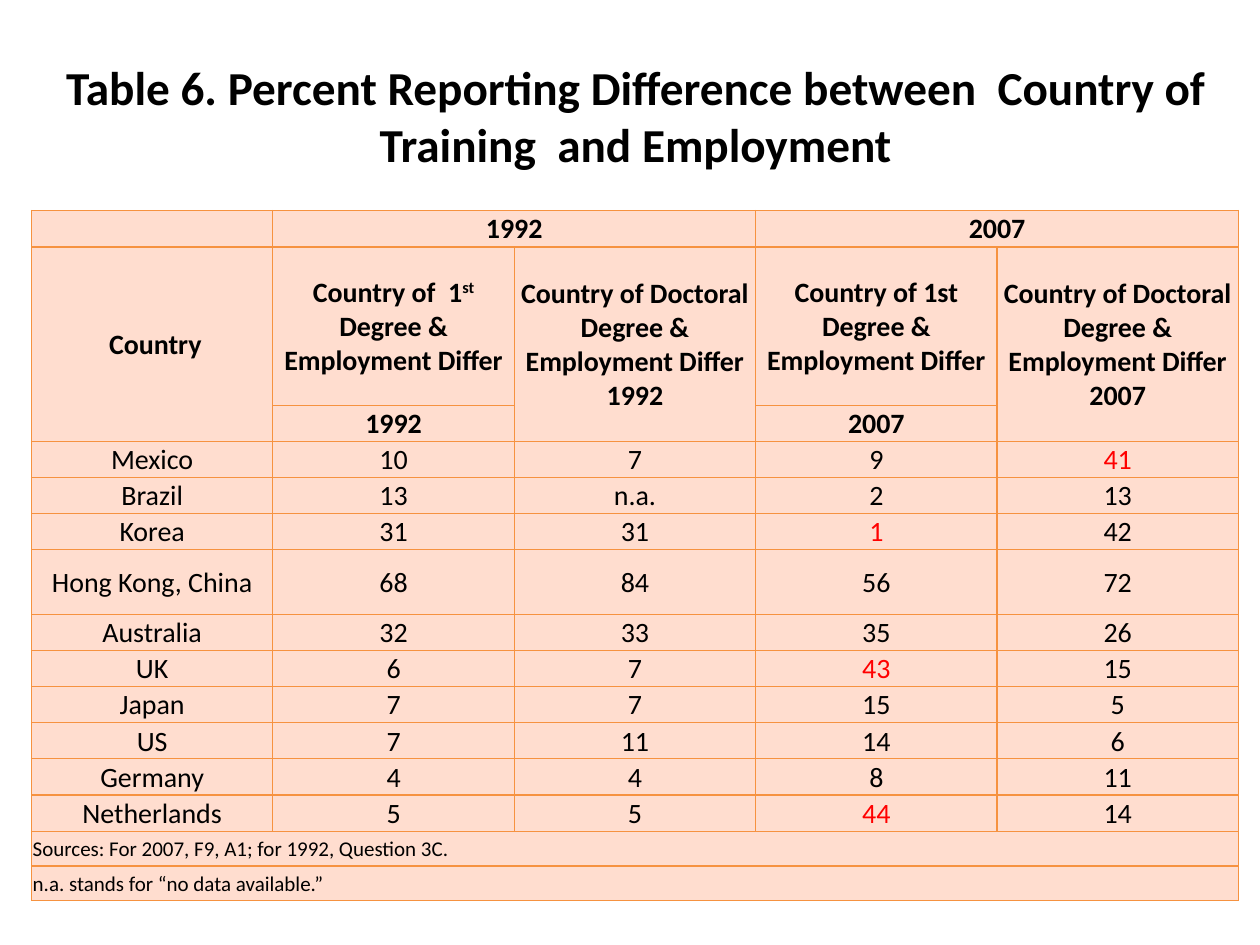
from lxml import etree
from pptx import Presentation
from pptx.dml.color import RGBColor
from pptx.enum import text
from pptx.oxml import ns
from pptx.util import Inches, Pt

FONT = "Calibri"
BLACK = RGBColor(0x00, 0x00, 0x00)
RED = RGBColor(0xFF, 0x00, 0x00)
PEACH = RGBColor(0xFF, 0xDD, 0xCF)
ORANGE = RGBColor(0xF6, 0x92, 0x40)

TITLE = "Table 6. Percent Reporting Difference between  Country of Training  and Employment"
HEADERS = [
    ["", "1992", "", "2007", ""],
    ["Country", "", "Country of Doctoral Degree & Employment Differ 1992",
     "Country of 1st Degree & Employment Differ",
     "Country of Doctoral Degree & Employment Differ 2007"],
    ["", "1992", "", "2007", ""],
]
FIRST_DEGREE_RUNS = [("Country of  1", False), ("st", True), (" Degree & Employment Differ", False)]
COUNTRIES = [
    ["Mexico", "10", "7", "9", "41"],
    ["Brazil", "13", "n.a.", "2", "13"],
    ["Korea", "31", "31", "1", "42"],
    ["Hong Kong, China", "68", "84", "56", "72"],
    ["Australia", "32", "33", "35", "26"],
    ["UK", "6", "7", "43", "15"],
    ["Japan", "7", "7", "15", "5"],
    ["US", "7", "11", "14", "6"],
    ["Germany", "4", "4", "8", "11"],
    ["Netherlands", "5", "5", "44", "14"],
]
HIGHLIGHTS = {("Mexico", 4), ("Korea", 3), ("UK", 3), ("Netherlands", 3)}
NOTES = ["Sources: For 2007, F9, A1; for 1992, Question 3C.",
         "n.a. stands for “no data available.”"]
MERGES = [((0, 1), (0, 2)), ((0, 3), (0, 4)), ((1, 0), (2, 0)),
          ((1, 2), (2, 2)), ((1, 4), (2, 4)), ((13, 0), (13, 4)), ((14, 0), (14, 4))]
ROW_HEIGHTS = [0.29, 1.27] + [0.29] * 4 + [0.52] + [0.29] * 6 + [0.28] * 2


def add_run(paragraph, words, size, bold=False, color=BLACK, superscript=False):
    """Append one formatted run to a paragraph."""
    run = paragraph.add_run()
    run.text = words
    run.font.name = FONT
    run.font.size = Pt(size)
    run.font.bold = bold
    run.font.color.rgb = color
    if superscript:
        run.font._element.set("baseline", "30000")


def format_cell(cell):
    """Give a cell its borders, fill, margins and anchor."""
    properties = cell._tc.get_or_add_tcPr()
    for side in ("lnL", "lnR", "lnT", "lnB"):
        line = etree.SubElement(properties, ns.qn(f"a:{side}"), w=str(Pt(0.75)))
        fill = etree.SubElement(line, ns.qn("a:solidFill"))
        etree.SubElement(fill, ns.qn("a:srgbClr"), val=str(ORANGE))
    cell.fill.solid()
    cell.fill.fore_color.rgb = PEACH
    cell.margin_left = cell.margin_right = cell.margin_top = Inches(0.01)
    cell.margin_bottom = 0
    cell.vertical_anchor = text.MSO_ANCHOR.MIDDLE


def write_header(table):
    """Write the year and column headings."""
    for row, headings in enumerate(HEADERS):
        for column, heading in enumerate(headings):
            cell = table.cell(row, column)
            if cell.is_spanned:
                continue
            paragraph = cell.text_frame.paragraphs[0]
            paragraph.alignment = text.PP_ALIGN.CENTER
            if (row, column) == (1, 1):
                for words, superscript in FIRST_DEGREE_RUNS:
                    add_run(paragraph, words, 16, True, superscript=superscript)
            else:
                if heading == "Country":
                    add_run(paragraph, " ", 16)
                add_run(paragraph, heading, 16, True)


def write_countries(table, first_row):
    """Write one row of percentages for each country."""
    for row, values in enumerate(COUNTRIES, first_row):
        for column, value in enumerate(values):
            paragraph = table.cell(row, column).text_frame.paragraphs[0]
            paragraph.alignment = text.PP_ALIGN.CENTER
            color = RED if (values[0], column) in HIGHLIGHTS else BLACK
            add_run(paragraph, value, 16, color=color)


def write_notes(table, first_row):
    """Write the source and abbreviation notes."""
    for row, note in enumerate(NOTES, first_row):
        paragraph = table.cell(row, 0).text_frame.paragraphs[0]
        paragraph.alignment = text.PP_ALIGN.LEFT
        add_run(paragraph, note, 12)


def add_title(slide, left, top, width, height):
    """Place and format the title placeholder."""
    title = slide.shapes.title
    title.left, title.top, title.width, title.height = left, top, width, height
    frame = title.text_frame
    frame.word_wrap = True
    frame.auto_size = text.MSO_AUTO_SIZE.NONE
    frame.vertical_anchor = text.MSO_ANCHOR.MIDDLE
    paragraph = frame.paragraphs[0]
    paragraph.alignment = text.PP_ALIGN.CENTER
    add_run(paragraph, TITLE, 27, True)


def add_mobility_table(slide, left, top, width, height):
    """Build the country table inside the given box."""
    columns = len(HEADERS[0])
    table = slide.shapes.add_table(len(ROW_HEIGHTS), columns, left, top, width, height).table
    table.first_row = table.horz_banding = False
    for column in table.columns:
        column.width = width // columns
    for row, share in zip(table.rows, ROW_HEIGHTS):
        row.height = int(height * share / sum(ROW_HEIGHTS))
    for cell in table.iter_cells():
        format_cell(cell)
    for start, end in MERGES:
        table.cell(*start).merge(table.cell(*end))
    write_header(table)
    write_countries(table, len(HEADERS))
    write_notes(table, len(HEADERS) + len(COUNTRIES))


def main():
    """Build and save the slide."""
    presentation = Presentation()
    presentation.slide_width, presentation.slide_height = Inches(10), Inches(7.5)
    slide = presentation.slides.add_slide(presentation.slide_layouts[5])
    add_title(slide, Inches(0.42), Inches(0.25), Inches(9.25), Inches(1.33))
    add_mobility_table(slide, Inches(0.25), Inches(1.67), Inches(9.58), Inches(5.48))
    presentation.save("out.pptx")


if __name__ == "__main__":
    main()
